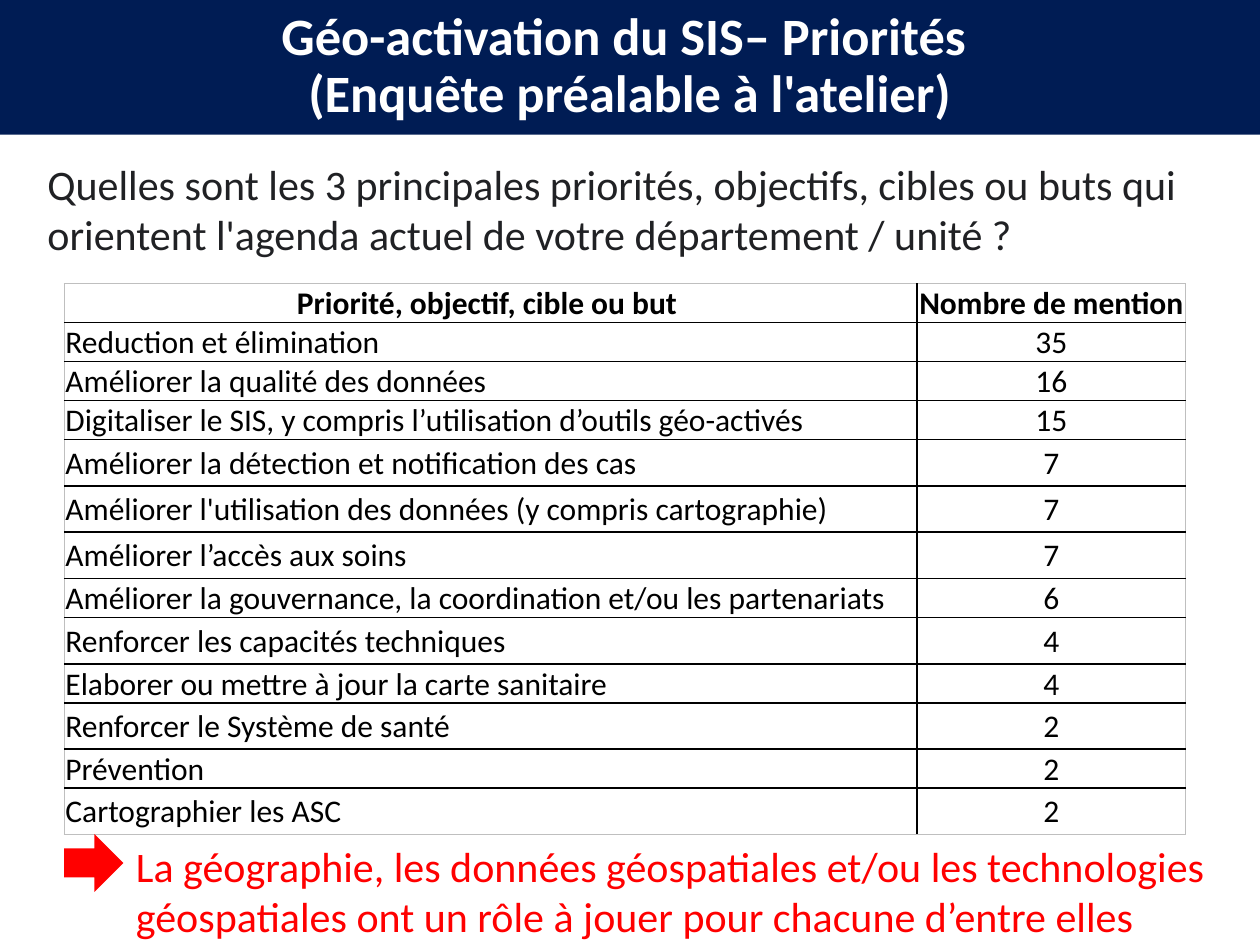
import pptx
import pptx.util
import pptx.dml.color
import pptx.enum.shapes
import pptx.enum.text
import pptx.oxml
import pptx.oxml.ns

Pt = pptx.util.Pt
Align = pptx.enum.text.PP_ALIGN
Anchor = pptx.enum.text.MSO_ANCHOR
Fit = pptx.enum.text.MSO_AUTO_SIZE
Shape = pptx.enum.shapes.MSO_SHAPE

# Content
TITLE = ["Géo-activation du SIS– Priorités ", "(Enquête préalable à l'atelier)"]
QUERY = ["Quelles sont les 3 principales priorités, objectifs, cibles ou buts "
         "qui orientent l'agenda actuel de votre département / unité ?"]
NOTE = ["La géographie, les données géospatiales et/ou les technologies "
        "géospatiales ont un rôle à jouer pour chacune d’entre elles"]
HEAD = ("Priorité, objectif, cible ou but ", "Nombre de mention")
GOALS = [
    ("Reduction et élimination", 35),
    ("Améliorer la qualité des données", 16),
    ("Digitaliser le SIS, y compris l’utilisation d’outils géo-activés", 15),
    ("Améliorer la détection et notification des cas", 7),
    ("Améliorer l'utilisation des données (y compris cartographie)", 7),
    ("Améliorer l’accès aux soins", 7),
    ("Améliorer la gouvernance, la coordination et/ou les partenariats", 6),
    ("Renforcer les capacités techniques", 4),
    ("Elaborer ou mettre à jour la carte sanitaire", 4),
    ("Renforcer le Système de santé", 2),
    ("Prévention", 2),
    ("Cartographier les ASC", 2),
]
TALL = {4, 5, 6, 8, 10, 12}
LOW, HIGH = 22.15, 26.45
COLS = (487.4, 153.4)
LEFT, TOP = 36.7, 162
BAND = (0, 0, 720, 77)

# Formats
WHITE = {"size": Pt(30), "bold": True, "name": "Calibri"}
PLAIN = {"size": Pt(24), "bold": False, "name": "Calibri"}
CELL = {"size": Pt(18), "bold": False, "name": "Calibri"}
INSET = {"margin_left": Pt(0.7), "margin_right": Pt(0.7),
         "margin_top": Pt(0.7), "margin_bottom": Pt(0)}


def tint(text):
    return pptx.dml.color.RGBColor.from_string(text)


def apply(item, look):
    for key, val in look.items():
        setattr(item, key, val)


def write(frame, lines, font, color, para):
    for i, line in enumerate(lines):
        p = frame.paragraphs[0] if i == 0 else frame.add_paragraph()
        apply(p, para)
        run = p.add_run()
        run.text = line
        apply(run.font, font)
        run.font.color.rgb = tint(color)


def label(box, lines, font, color, para, look):
    frame = slide.shapes.add_textbox(*map(Pt, box)).text_frame
    apply(frame, {"word_wrap": True, **look})
    write(frame, lines, font, color, para)


def block(kind, box, color):
    shape = slide.shapes.add_shape(kind, *map(Pt, box))
    shape.shadow.inherit = False
    shape.fill.solid()
    shape.fill.fore_color.rgb = tint(color)
    shape.line.fill.background()


def edge(cell, side, color, width):
    line = pptx.oxml.parse_xml(
        f'<a:{side} {pptx.oxml.ns.nsdecls("a")} w="{Pt(width)}">'
        f'<a:solidFill><a:srgbClr val="{color}"/></a:solidFill></a:{side}>')
    cell._tc.get_or_add_tcPr().append(line)


deck = pptx.Presentation()
deck.slide_width, deck.slide_height = Pt(720), Pt(540)
slide = deck.slides.add_slide(deck.slide_layouts[6])

# Title band and question
block(Shape.RECTANGLE, BAND, "001C54")
label(BAND, TITLE, WHITE, "FFFFFF",
      {"alignment": Align.CENTER, "line_spacing": 0.9},
      {"vertical_anchor": Anchor.MIDDLE})
GROW = {"auto_size": Fit.SHAPE_TO_FIT_TEXT}
label((20, 87, 680.4, 65.4), QUERY, PLAIN, "202124", {}, GROW)

# Table of priorities
rows = [HEAD] + GOALS
tall = [HIGH if i in TALL else LOW for i in range(len(rows))]
base = TOP + sum(tall)
grid = slide.shapes.add_table(len(rows), len(COLS), Pt(LEFT), Pt(TOP),
                              Pt(sum(COLS)), Pt(base - TOP)).table
for col, wide in zip(grid.columns, COLS):
    col.width = Pt(wide)
for r, row in enumerate(rows):
    grid.rows[r].height = Pt(tall[r])
    for c, val in enumerate(row):
        cell = grid.cell(r, c)
        apply(cell, {**INSET, "vertical_anchor":
                     Anchor.MIDDLE if r else Anchor.BOTTOM})
        mid = c == 1 or r == 0
        write(cell.text_frame, [str(val)], {**CELL, "bold": r == 0}, "000000",
              {"alignment": Align.CENTER if mid else Align.LEFT})
        outer = {"lnL": c == 0, "lnR": c == len(COLS) - 1,
                 "lnT": r == 0, "lnB": r == len(rows) - 1}
        for side, rim in outer.items():
            edge(cell, side, *(("BFBFBF", 0.5) if rim else ("000000", 1)))
        cell.fill.background()

# Conclusion with arrow
label((70.6, 476.6, 643.7, 65.4), NOTE, PLAIN, "FF0000", {}, GROW)
block(Shape.RIGHT_ARROW, (LEFT, 476.6, 33.8, 33.1), "FF0000")

deck.save("out.pptx")
